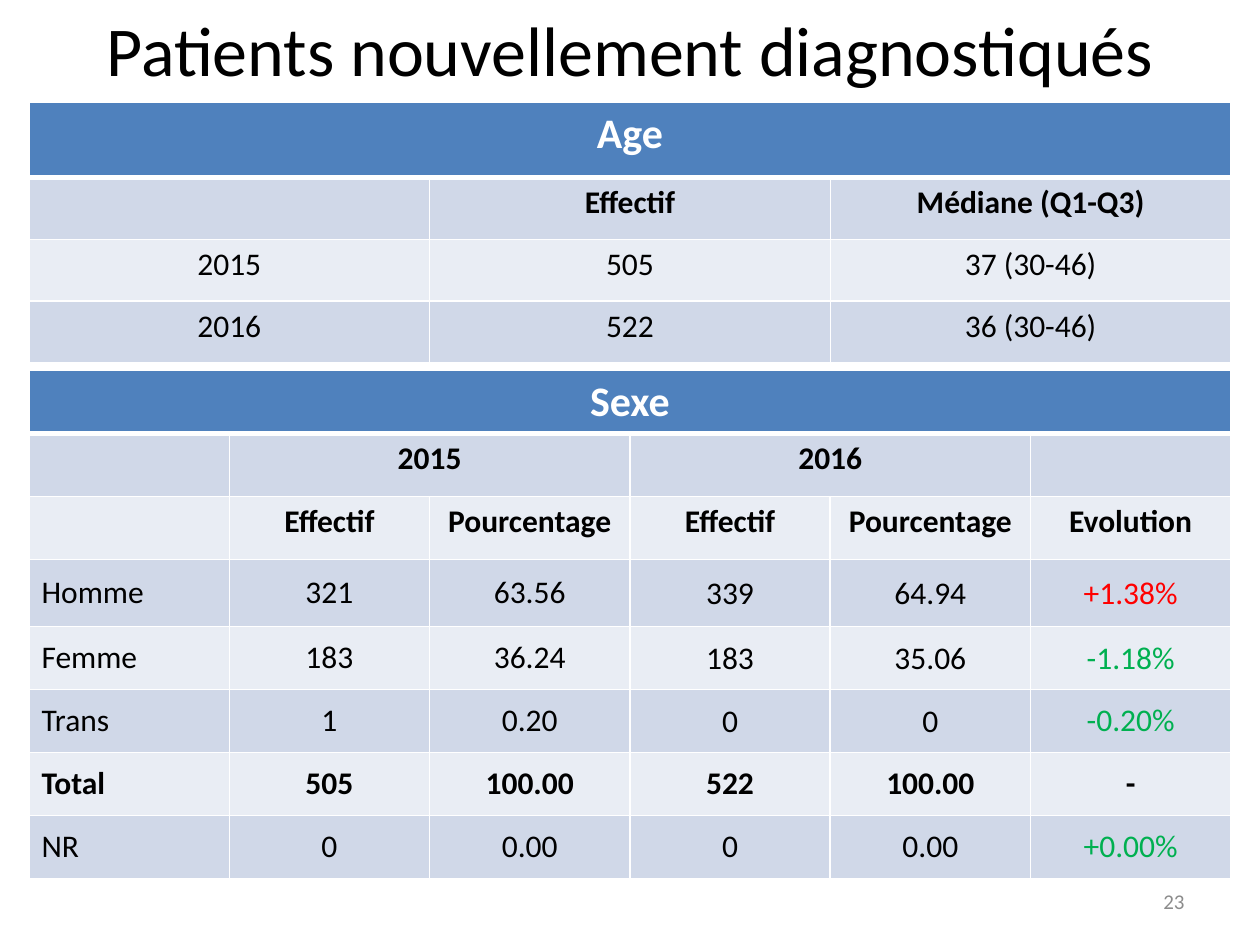
from dataclasses import dataclass, field

from lxml import etree
from pptx import Presentation
from pptx.dml.color import RGBColor
from pptx.enum import text as t
from pptx.oxml import ns
from pptx.util import Inches, Pt

WHITE = RGBColor(0xFF, 0xFF, 0xFF)
BLACK = RGBColor(0, 0, 0)
GRAY = RGBColor(0x8C, 0x8C, 0x8C)
BLUE = RGBColor(0x4F, 0x81, 0xBD)
DARK = RGBColor(0xD0, 0xD8, 0xE8)
PALE = RGBColor(0xE9, 0xED, 0xF4)
RED = RGBColor(0xFF, 0, 0)
GREEN = RGBColor(0, 0xB0, 0x50)
FONT = "Calibri"
LEFT, WIDTH = 0.23, 9.54
MID = t.MSO_ANCHOR.MIDDLE
ALIGN = t.PP_ALIGN


@dataclass
class Grid:
    top: float
    heights: list[float]
    rows: list[list[str]]
    bold: set[int]
    body: int  # first row whose text is centred vertically
    spans: list[tuple[int, int, int]]  # row, first column, last column
    tight: set[tuple[int, int]] = field(default_factory=set)
    tints: dict[tuple[int, int], RGBColor] = field(default_factory=dict)


AGE = Grid(
    top=0.81,
    heights=[0.6, 0.49, 0.49, 0.49],
    rows=[
        ["Age", "", ""],
        ["", "Effectif", "Médiane (Q1-Q3)"],
        ["2015", "505", "37 (30-46)"],
        ["2016", "522", "36 (30-46)"],
    ],
    bold={0, 1},
    body=4,
    spans=[(0, 0, 2)],
)

SEX = Grid(
    top=2.94,
    heights=[0.5, 0.5, 0.5, 0.53, 0.5, 0.5, 0.5, 0.5],
    rows=[
        ["Sexe", "", "", "", "", ""],
        ["", "2015", "", "2016", "", ""],
        ["", "Effectif", "Pourcentage", "Effectif", "Pourcentage", "Evolution"],
        ["Homme", "321", "63.56", "339", "64.94", "+1.38%"],
        ["Femme", "183", "36.24", "183", "35.06", "-1.18%"],
        ["Trans", "1", "0.20", "0", "0", "-0.20%"],
        ["Total", "505", "100.00", "522", "100.00", "-"],
        ["NR", "0", "0.00", "0", "0.00", "+0.00%"],
    ],
    bold={0, 1, 2, 6},
    body=3,
    spans=[(0, 0, 5), (1, 1, 2), (1, 3, 4)],
    tight={(3, 3), (3, 4), (3, 5), (4, 3), (4, 4), (4, 5), (5, 3), (5, 4)},
    tints={(3, 5): RED, (4, 5): GREEN, (5, 5): GREEN, (7, 5): GREEN},
)


def write(frame, words: str, size: int, color: RGBColor, align, bold=False) -> None:
    frame.text = words
    para = frame.paragraphs[0]
    para.alignment = align
    for font in [para.font] + [run.font for run in para.runs]:
        font.name, font.size, font.bold = FONT, Pt(size), bold
        font.color.rgb = color


def border(cell, row: int) -> None:
    """White cell edges, thicker between the header and the rows below."""
    props = cell._tc.get_or_add_tcPr()
    for side in "LRTB":
        thick = (row, side) in {(0, "B"), (1, "T")}
        line = etree.SubElement(props, ns.qn(f"a:ln{side}"), w=str(Pt(3 if thick else 1)))
        fill = etree.SubElement(line, ns.qn("a:solidFill"))
        etree.SubElement(fill, ns.qn("a:srgbClr"), val=str(WHITE))


def draw_cell(cell, grid: Grid, row: int, col: int) -> None:
    border(cell, row)
    cell.fill.solid()
    cell.fill.fore_color.rgb = BLUE if row == 0 else DARK if row % 2 else PALE
    if row >= grid.body:
        cell.vertical_anchor = MID
    if (row, col) in grid.tight:
        cell.margin_left = cell.margin_right = cell.margin_top = Inches(0.01)
        cell.margin_bottom = 0
    color = WHITE if row == 0 else grid.tints.get((row, col), BLACK)
    align = ALIGN.LEFT if row >= grid.body and col == 0 else ALIGN.CENTER
    write(cell.text_frame, grid.rows[row][col], 18 if row else 24, color, align, row in grid.bold)


def draw_grid(slide, grid: Grid) -> None:
    count = len(grid.rows[0])
    table = slide.shapes.add_table(
        len(grid.rows), count, Inches(LEFT), Inches(grid.top),
        Inches(WIDTH), Inches(sum(grid.heights))).table
    for col in table.columns:
        col.width = Inches(WIDTH / count)
    for row, high in enumerate(grid.heights):
        table.rows[row].height = Inches(high)
        for col in range(count):
            draw_cell(table.cell(row, col), grid, row, col)
    for row, first, last in grid.spans:
        table.cell(row, first).merge(table.cell(row, last))


def label(slide, box: tuple, words: str, size: int, color: RGBColor, align, anchor) -> None:
    frame = slide.shapes.add_textbox(*map(Inches, box)).text_frame
    frame.word_wrap = True
    frame.vertical_anchor = anchor
    write(frame, words, size, color, align)


def main() -> None:
    deck = Presentation()
    deck.slide_width, deck.slide_height = Inches(10), Inches(7.5)
    slide = deck.slides.add_slide(deck.slide_layouts[6])
    label(slide, (7.17, 6.95, 2.33, 0.4), "23", 12, GRAY, ALIGN.RIGHT, MID)
    for grid in (AGE, SEX):
        draw_grid(slide, grid)
    label(slide, (0, 0, 10, 0.77), "Patients nouvellement diagnostiqués", 40, BLACK,
          ALIGN.CENTER, t.MSO_ANCHOR.TOP)
    deck.save("out.pptx")


if __name__ == "__main__":
    main()
